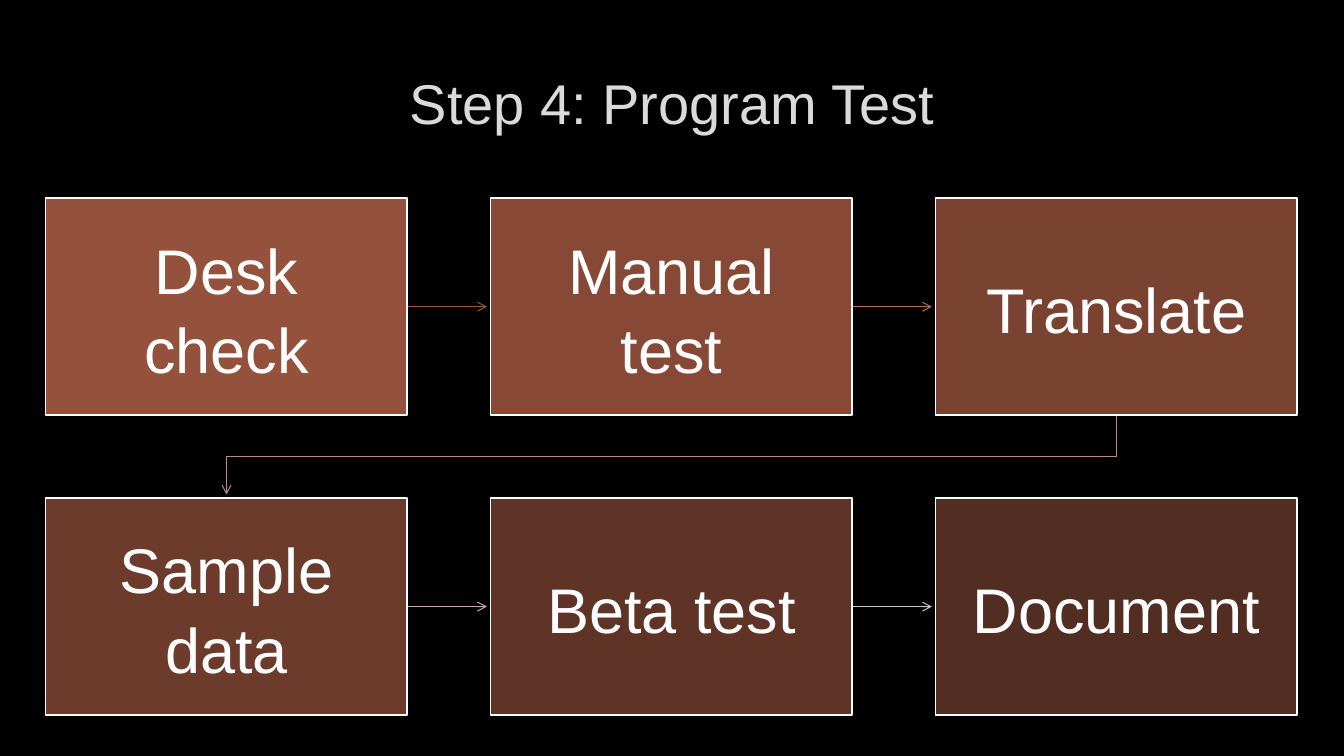
from lxml import etree
from pptx import Presentation
from pptx.dml.color import RGBColor
from pptx.enum.shapes import MSO_CONNECTOR, MSO_SHAPE
from pptx.enum.text import MSO_ANCHOR, PP_ALIGN
from pptx.oxml.ns import qn
from pptx.util import Pt

STRAIGHT = MSO_CONNECTOR.STRAIGHT
RECTANGLE = MSO_SHAPE.RECTANGLE
MIDDLE = MSO_ANCHOR.MIDDLE
CENTER = PP_ALIGN.CENTER

FONT = "Arial"
COLORS = {
    "background": "000000",
    "title": "DADADA",
    "box": "A55A43",
    "white": "FFFFFF",
}
# Each step: label, fill opacity in percent, colour of the arrow to the next step
STEPS = [
    ("Desk check", 90, "9E5640"),
    ("Manual test", 82, "B46C59"),
    ("Translate", 74, "BE8A7E"),
    ("Sample data", 66, "CAA8A0"),
    ("Beta test", 58, "D8C4C1"),
    ("Document", 50, None),
]
COLUMNS = 3
LEFT, TOP = 32.6, 141.6
BOX_WIDTH, BOX_HEIGHT = 258.4, 155
COLUMN_PITCH, ROW_PITCH = 317.8, 214.2
BOX_INSET = 25.2
ARROW_GAP = 2.6


def rgb(color):
    return RGBColor.from_string(color)


class SlideBuilder:
    def __init__(self, slide):
        self.slide = slide
        background = slide.background.fill
        background.solid()
        background.fore_color.rgb = rgb(COLORS["background"])

    def set_text(self, shape, text, size, color, inset, spacing):
        frame = shape.text_frame
        frame.word_wrap = True
        frame.vertical_anchor = MIDDLE
        frame.margin_left = frame.margin_right = Pt(inset)
        frame.margin_top = frame.margin_bottom = Pt(inset)
        paragraph = frame.paragraphs[0]
        paragraph.text = text
        paragraph.alignment = CENTER
        paragraph.line_spacing = spacing
        paragraph.font.name = FONT
        paragraph.font.size = Pt(size)
        paragraph.font.color.rgb = rgb(color)

    def title(self, text, left, top, width, height):
        shape = self.slide.shapes.add_textbox(Pt(left), Pt(top), Pt(width), Pt(height))
        self.set_text(shape, text, 40, COLORS["title"], 3.6, 1.1)

    def box(self, text, left, top, opacity):
        shape = self.slide.shapes.add_shape(
            RECTANGLE, Pt(left), Pt(top), Pt(BOX_WIDTH), Pt(BOX_HEIGHT))
        shape.shadow.inherit = False
        shape.fill.solid()
        shape.fill.fore_color.rgb = rgb(COLORS["box"])
        color_element = shape._element.spPr.find(qn("a:solidFill"))[0]
        etree.SubElement(color_element, qn("a:alpha"), val=str(opacity * 1000))
        shape.line.color.rgb = rgb(COLORS["white"])
        shape.line.width = Pt(1.25)
        self.set_text(shape, text, 45, COLORS["white"], BOX_INSET, 1.05)

    def arrow(self, points, color):
        """Draw an open-headed arrow, straight or bent, through the points."""
        points = [(Pt(x), Pt(y)) for x, y in points]
        if len(points) == 2:
            shape = self.slide.shapes.add_connector(STRAIGHT, *points[0], *points[1])
        else:
            builder = self.slide.shapes.build_freeform(*points[0])
            builder.add_line_segments(points[1:], close=False)
            shape = builder.convert_to_shape()
            shape.fill.background()
        shape.line.color.rgb = rgb(color)
        shape.line.width = Pt(0.75)
        properties = shape._element.spPr
        etree.SubElement(properties.find(qn("a:ln")), qn("a:tailEnd"), type="arrow")
        etree.SubElement(properties, qn("a:effectLst"))


def box_position(index):
    row, column = divmod(index, COLUMNS)
    return LEFT + column * COLUMN_PITCH, TOP + row * ROW_PITCH


def arrow_points(index):
    """Route from one box to the next, bending where the row ends."""
    left, top = box_position(index)
    next_left, next_top = box_position(index + 1)
    if top == next_top:
        middle = top + BOX_HEIGHT / 2
        return [(left + BOX_WIDTH, middle), (next_left - ARROW_GAP, middle)]
    start, end = left + BOX_WIDTH / 2, next_left + BOX_WIDTH / 2
    bottom = top + BOX_HEIGHT
    bend = (bottom + next_top) / 2
    return [(start, bottom), (start, bend), (end, bend), (end, next_top - ARROW_GAP)]


def main():
    presentation = Presentation()
    presentation.slide_width = Pt(960)
    presentation.slide_height = Pt(540)
    builder = SlideBuilder(presentation.slides.add_slide(presentation.slide_layouts[6]))
    builder.title("Step 4: Program Test", 72.5, 32.4, 815, 76.4)
    for index, (label, opacity, arrow_color) in enumerate(STEPS):
        if arrow_color:
            builder.arrow(arrow_points(index), arrow_color)
        builder.box(label, *box_position(index), opacity)
    presentation.save("out.pptx")


if __name__ == "__main__":
    main()
